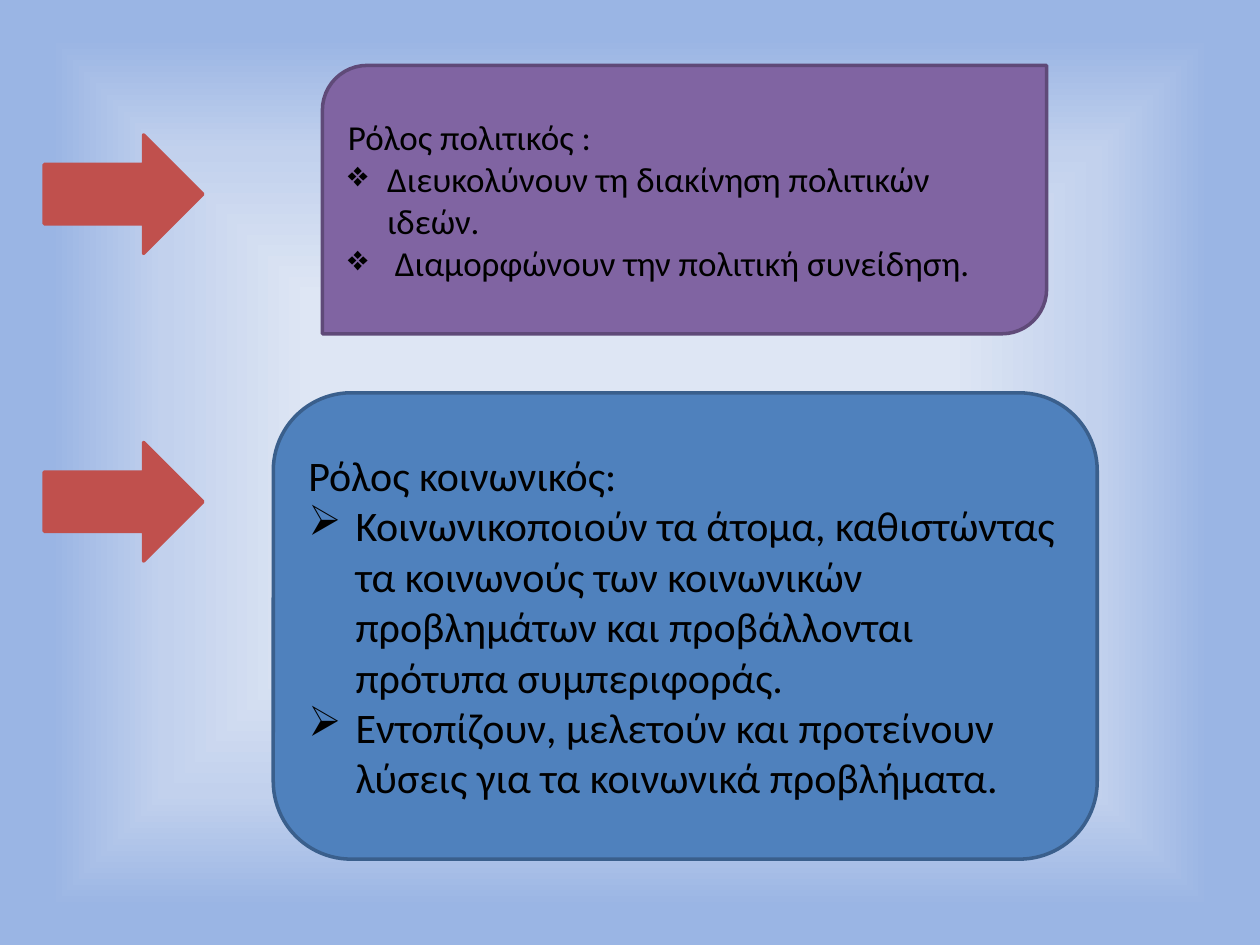
from dataclasses import dataclass

from lxml.etree import SubElement
from pptx import Presentation
from pptx.dml.color import RGBColor
from pptx.enum.shapes import MSO_SHAPE
from pptx.enum.text import MSO_ANCHOR, PP_ALIGN
from pptx.oxml.ns import qn
from pptx.util import Cm, Pt


@dataclass(frozen=True)
class Theme:
    font: str = "Calibri"
    text: str = "000000"
    arrow: str = "C0504D"
    political: str = "8064A2"
    political_line: str = "5F4A78"
    social: str = "4F81BD"
    social_line: str = "3A5F8C"
    background: tuple = ((4, "E1E8F5"), (37, "DEE6F4"), (68, "C2D1ED"), (92, "9AB5E4"))
    political_size: int = 20
    social_size: int = 24
    line_width: int = 2


theme = Theme()


def add_filled_shape(preset, left, top, width, height, fill, line):
    shape = slide.shapes.add_shape(preset, Cm(left), Cm(top), Cm(width), Cm(height))
    shape.shadow.inherit = False
    shape.fill.solid()
    shape.fill.fore_color.rgb = RGBColor.from_string(fill)
    shape.line.color.rgb = RGBColor.from_string(line)
    shape.line.width = Pt(theme.line_width)
    return shape


def set_bullet(paragraph, character, indent):
    properties = paragraph._p.get_or_add_pPr()
    properties.set("marL", str(Cm(indent)))
    properties.set("indent", str(-Cm(indent)))
    SubElement(properties, qn("a:buChar"), char=character)


presentation = Presentation()
presentation.slide_width = Cm(25.4)
presentation.slide_height = Cm(19.05)
slide = presentation.slides.add_slide(presentation.slide_layouts[6])

# Background: gradient spreading from the centre
slide.background.fill.gradient()
gradient = slide.element.find(".//" + qn("a:gradFill"))
for child in list(gradient):
    gradient.remove(child)
stops = SubElement(gradient, qn("a:gsLst"))
for position, color in theme.background:
    stop = SubElement(stops, qn("a:gs"), pos=str(position * 1000))
    SubElement(stop, qn("a:srgbClr"), val=color)
spread = SubElement(gradient, qn("a:path"), attrib={"path": "shape"})
SubElement(spread, qn("a:fillToRect"), l="50000", t="50000", r="50000", b="50000")

# Arrows pointing at the two roles
for top in (2.72, 8.92):
    add_filled_shape(MSO_SHAPE.RIGHT_ARROW, 0.89, top, 3.2, 2.39, theme.arrow, theme.arrow)

# Role boxes
roles = [
    (MSO_SHAPE.ROUND_2_DIAG_RECTANGLE, (6.5, 1.32, 14.6, 5.41),
     theme.political, theme.political_line, theme.political_size, "❖", 0.79,
     "Ρόλος πολιτικός :",
     ["Διευκολύνουν τη διακίνηση πολιτικών ιδεών.",
      " Διαμορφώνουν την πολιτική συνείδηση."]),
    (MSO_SHAPE.ROUNDED_RECTANGLE, (5.51, 7.92, 16.61, 9.4),
     theme.social, theme.social_line, theme.social_size, "➢", 0.95,
     "Ρόλος κοινωνικός:",
     ["Κοινωνικοποιούν τα άτομα, καθιστώντας τα κοινωνούς των κοινωνικών "
      "προβλημάτων και προβάλλονται πρότυπα συμπεριφοράς.",
      "Εντοπίζουν, μελετούν και προτείνουν λύσεις για τα κοινωνικά προβλήματα."]),
]
for preset, box, fill, line, size, bullet, indent, heading, points in roles:
    shape = add_filled_shape(preset, *box, fill, line)
    text_frame = shape.text_frame
    text_frame.word_wrap = True
    text_frame.vertical_anchor = MSO_ANCHOR.MIDDLE
    text_frame.text = "\n".join([heading, *points])
    for paragraph in text_frame.paragraphs[1:]:
        set_bullet(paragraph, bullet, indent)
    for paragraph in text_frame.paragraphs:
        paragraph.alignment = PP_ALIGN.LEFT
        paragraph.font.name = theme.font
        paragraph.font.size = Pt(size)
        paragraph.font.color.rgb = RGBColor.from_string(theme.text)

presentation.save("out.pptx")
